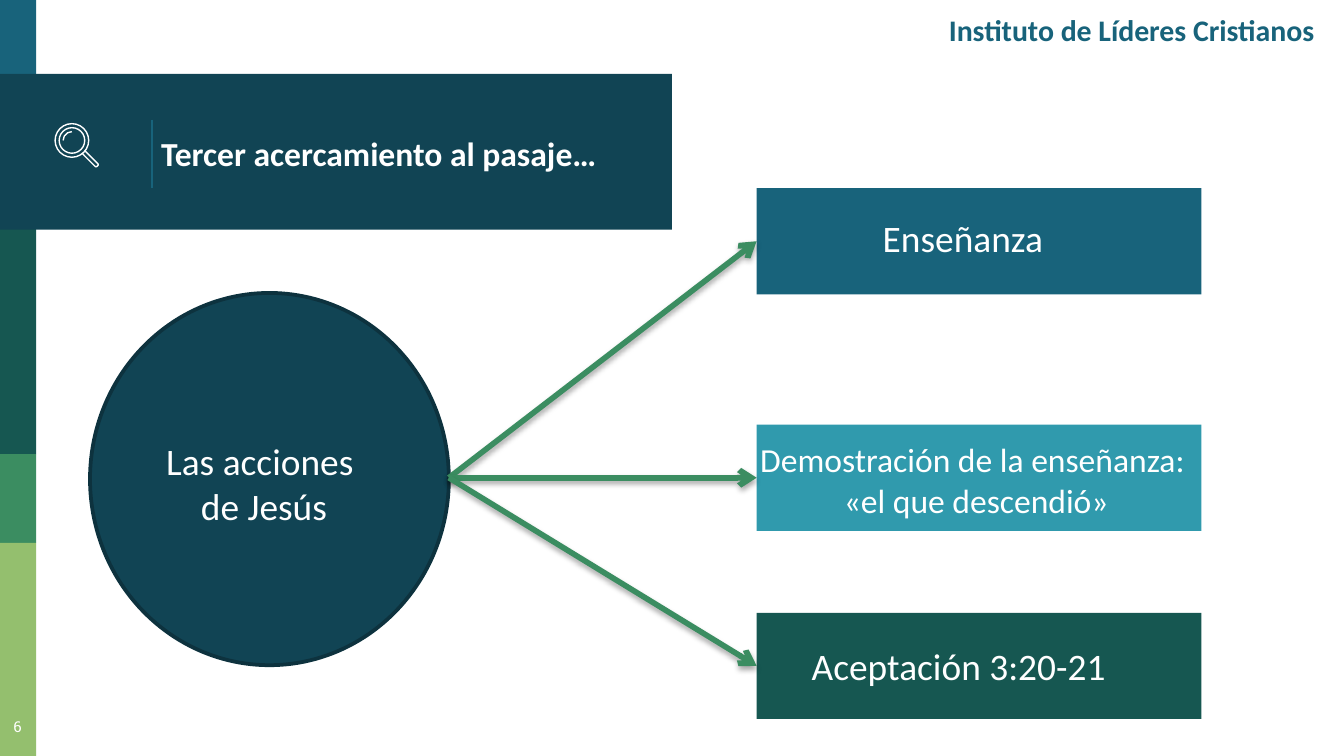
from lxml.etree import SubElement
from pptx import Presentation
from pptx.dml.color import RGBColor
from pptx.enum.shapes import MSO_CONNECTOR, MSO_SHAPE
from pptx.enum.text import MSO_ANCHOR, PP_ALIGN
from pptx.oxml.ns import qn
from pptx.util import Inches, Pt

COLORS = {
    "blue": "18637B", "navy": "114454", "navy_edge": "0D323E",
    "forest": "165751", "green": "3B8D61", "lime": "94BF6E",
    "teal": "309AAD", "white": "FFFFFF", "shadow": "000000",
}


def rgb(name):
    return RGBColor.from_string(COLORS[name])


def style(shape, fill=None, line=None, width=0.75):
    shape.shadow.inherit = False
    if fill:
        shape.fill.solid()
        shape.fill.fore_color.rgb = rgb(fill)
    else:
        shape.fill.background()
    if line:
        shape.line.color.rgb = rgb(line)
        shape.line.width = Pt(width)
    else:
        shape.line.fill.background()
    return shape


def add_preset(slide, preset, box, **look):
    return style(slide.shapes.add_shape(preset, *map(Inches, box)), **look)


def add_text(slide, box, text, size=20, color="white", font="Calibri", bold=False,
             align=PP_ALIGN.CENTER, anchor=MSO_ANCHOR.TOP, inset=(0.1, 0.05)):
    frame = slide.shapes.add_textbox(*map(Inches, box)).text_frame
    frame.word_wrap = True
    frame.vertical_anchor = anchor
    frame.margin_left = frame.margin_right = Inches(inset[0])
    frame.margin_top = frame.margin_bottom = Inches(inset[1])
    frame.text = text
    for paragraph in frame.paragraphs:
        paragraph.alignment = align
        for run in paragraph.runs:
            run.font.name = font
            run.font.size = Pt(size)
            run.font.bold = bold
            run.font.color.rgb = rgb(color)


def add_line(slide, start, end, color, width):
    line = slide.shapes.add_connector(
        MSO_CONNECTOR.STRAIGHT, *map(Inches, (*start, *end)))
    line.line.color.rgb = rgb(color)
    line.line.width = Pt(width)
    return line, SubElement(line._element.spPr, qn("a:effectLst"))


def add_arrow(slide, start, end):
    arrow, effects = add_line(slide, start, end, "green", 3)
    SubElement(arrow.line._get_or_add_ln(), qn("a:tailEnd"), type="arrow")
    shadow = SubElement(effects, qn("a:outerShdw"), blurRad=str(Pt(3.1)),
                        dist=str(Pt(1.8)), dir="5400000", rotWithShape="0")
    tint = SubElement(shadow, qn("a:srgbClr"), val=COLORS["shadow"])
    SubElement(tint, qn("a:alpha"), val="35000")


def add_sidebar(slide, left, top, width):
    bands = [("blue", 0, 0.58), ("forest", 1.7, 1.68),
             ("green", 3.38, 0.66), ("lime", 4.04, 1.59)]
    for color, offset, height in bands:
        add_preset(slide, MSO_SHAPE.RECTANGLE, (left, top + offset, width, height), fill=color)
    add_text(slide, (left - 0.06, top + 5.27, 0.38, 0.35), "6", size=8,
             font="Roboto Slab", inset=(0.1, 0.13))


def add_magnifier(slide, left, top):
    # Lens rim and inner glass share one centre
    for inset, diameter in ((0, 0.25), (0.03, 0.19)):
        add_preset(slide, MSO_SHAPE.OVAL,
                   (left + inset, top + inset, diameter, diameter), line="white")
    # Glint: the upper left quarter of a circle
    glint = add_preset(slide, MSO_SHAPE.ARC, (left + 0.06, top + 0.06, 0.13, 0.13), line="white")
    glint.adjustments[0], glint.adjustments[1] = 108, 162
    # Handle
    outline = [(0.2, 0.22), (0.3, 0.32), (0.31, 0.32), (0.32, 0.31), (0.32, 0.3), (0.22, 0.2)]
    points = [(Inches(left + x), Inches(top + y)) for x, y in outline]
    builder = slide.shapes.build_freeform(*points[0])
    builder.add_line_segments(points[1:], close=False)
    style(builder.convert_to_shape(), line="white")


def add_title_band(slide, left, top, width, height):
    add_preset(slide, MSO_SHAPE.RECTANGLE, (left, top, width, height), fill="navy")
    add_line(slide, (left + 1.13, top + 0.34), (left + 1.13, top + 0.85), "blue", 0.75)
    add_magnifier(slide, left + 0.41, top + 0.37)
    add_text(slide, (left + 1.1, top + 0.03, 4.22, 1.12), "Tercer acercamiento al pasaje…",
             size=18, bold=True, align=PP_ALIGN.LEFT, anchor=MSO_ANCHOR.MIDDLE, inset=(0.1, 0.1))


def add_diagram(slide, left, top):
    # Source circle
    circle_top, circle_width, circle_height = top + 0.78, 2.67, 2.77
    add_preset(slide, MSO_SHAPE.OVAL, (left, circle_top, circle_width, circle_height),
               fill="navy", line="navy_edge", width=2)
    add_text(slide, (left - 0.16, circle_top + 1.03, 2.91, 0.77), "Las acciones \nde Jesús")

    # Outcomes: colour, top offset, text, size, text box within the bar
    bar_left, bar_width, bar_height = left + 4.96, 3.31, 0.79
    outcomes = [
        ("blue", 0, "Enseñanza", 20, (0.08, 0.15, 2.91, 0.44)),
        ("teal", 1.76, "Demostración de la enseñanza: \v«el que descendió»", 18,
         (-0.27, 0.06, 3.81, 0.71)),
        ("forest", 3.16, "Aceptación 3:20-21 ", 20, (0.08, 0.18, 2.91, 0.44)),
    ]
    # Arrows leave the circle level with the middle outcome
    hub = (left + circle_width, top + outcomes[1][1] + bar_height / 2)
    for color, offset, text, size, (dx, dy, width, height) in outcomes:
        bar_top = top + offset
        add_preset(slide, MSO_SHAPE.RECTANGLE, (bar_left, bar_top, bar_width, bar_height),
                   fill=color)
        add_arrow(slide, hub, (bar_left, bar_top + bar_height / 2))
        add_text(slide, (bar_left + dx, bar_top + dy, width, height), text, size=size)


def main():
    deck = Presentation()
    deck.slide_width = Inches(10)
    deck.slide_height = deck.slide_width * 9 // 16
    slide = deck.slides.add_slide(deck.slide_layouts[6])
    add_sidebar(slide, 0, 0, 0.27)
    add_title_band(slide, 0, 0.55, 5, 1.16)
    add_text(slide, (6.18, 0.04, 3.7, 0.36), "Instituto de Líderes Cristianos", size=16,
             color="blue", bold=True, align=PP_ALIGN.RIGHT, anchor=MSO_ANCHOR.MIDDLE)
    add_diagram(slide, 0.67, 1.4)
    deck.save("out.pptx")


if __name__ == "__main__":
    main()
